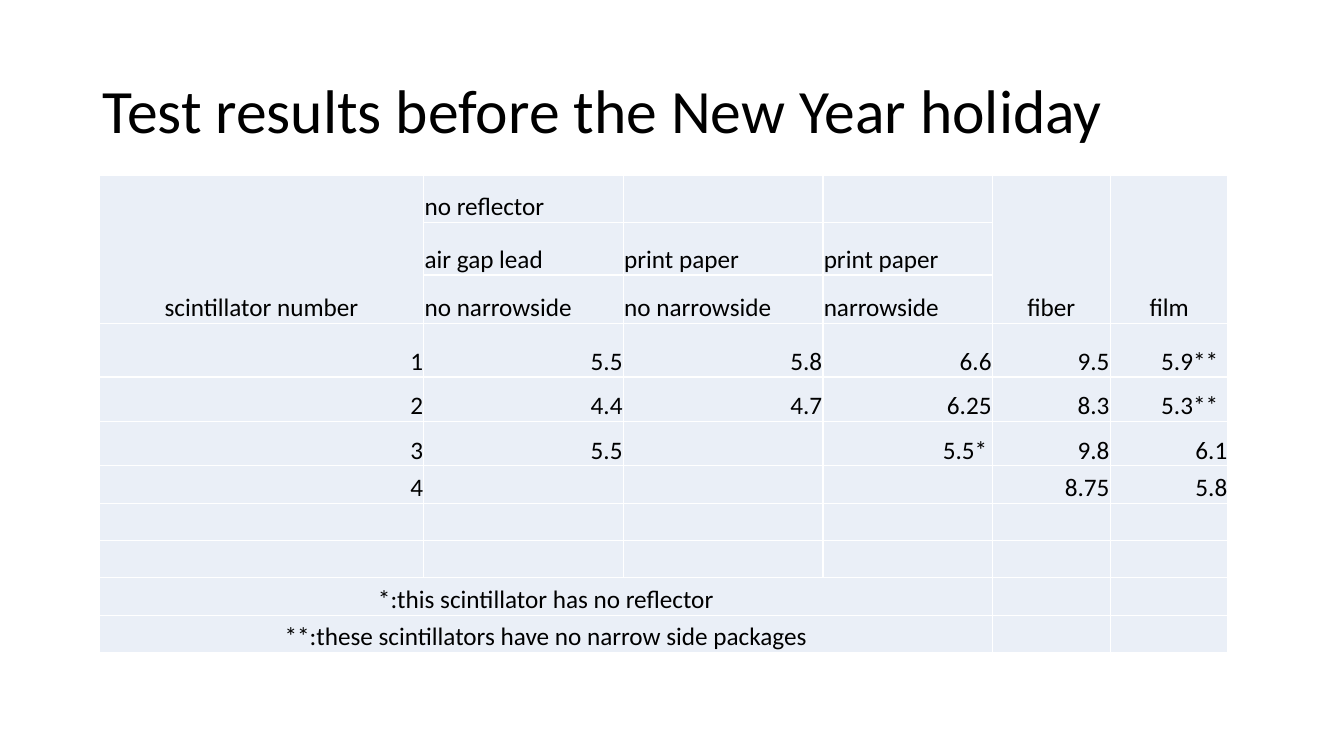
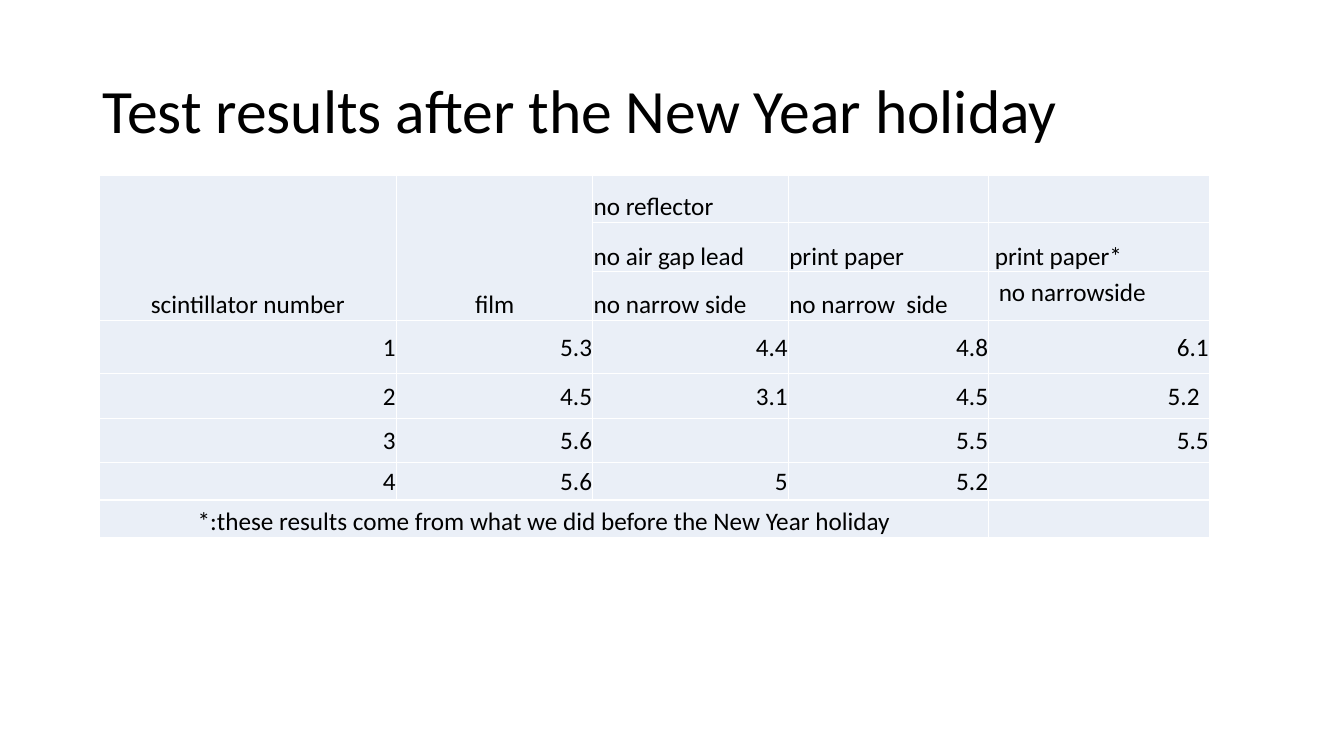
from dataclasses import dataclass, field

import pptx
import pptx.dml.color
import pptx.enum.text
import pptx.util

Cm = pptx.util.Cm
Pt = pptx.util.Pt
ALIGN = pptx.enum.text.PP_ALIGN
ANCHOR = pptx.enum.text.MSO_ANCHOR

COLORS = {"text": "000000", "cell": "EAEFF7"}
FONT = "Calibri"
TITLE_ONLY = 5
HEADER_ROWS = 3
NOTE_COLUMNS = 4
HEADER_HEIGHTS = [1.19, 1.32, 1.22]
VALUE_HEIGHTS = [1.35, 1.12, 1.12]
SHORT_ROW = 0.94
THIN = 0.02


@dataclass
class Results:
    title: str
    columns: list
    heights: list
    rows: list
    tall_headers: list
    note_count: int
    value_anchor: object
    side_insets: dict = field(default_factory=dict)
    top_cells: list = field(default_factory=list)


BEFORE = Results(
    title="Test results before the New Year holiday",
    columns=[8.18, 5.03, 5.03, 4.27, 2.97, 2.97],
    heights=HEADER_HEIGHTS + VALUE_HEIGHTS + [SHORT_ROW] * 5,
    rows=[
        ["scintillator number", "no reflector", "", "", "fiber", "film"],
        ["", "air gap lead", "print paper", "print paper", "", ""],
        ["", "no narrowside", "no narrowside", "narrowside", "", ""],
        ["1", "5.5", "5.8", "6.6", "9.5", "5.9**"],
        ["2", "4.4", "4.7", "6.25", "8.3", "5.3**"],
        ["3", "5.5", "", "5.5*", "9.8", "6.1"],
        ["4", "", "", "", "8.75", "5.8"],
        [""] * 6,
        [""] * 6,
        ["*:this scintillator has no reflector"] + [""] * 5,
        ["**:these scintillators have no narrow side packages"] + [""] * 5,
    ],
    tall_headers=[0, 4, 5],
    note_count=2,
    value_anchor=ANCHOR.BOTTOM,
    side_insets={(3, 5): 0.25, (4, 5): 0.25, (5, 3): 0.13},
)

AFTER = Results(
    title="Test results after the New Year holiday",
    columns=[7.49, 4.95, 4.93, 5.05, 5.56],
    heights=[1.19, 1.24, 1.22] + VALUE_HEIGHTS + [SHORT_ROW] * 2,
    rows=[
        ["scintillator number", "film", "no reflector", "", ""],
        ["", "", "no air gap lead", "print paper", "print paper*"],
        ["", "", "no narrow side", "no narrow  side", "no narrowside"],
        ["1", "5.3", "4.4", "4.8", "6.1"],
        ["2", "4.5", "3.1", "4.5", "5.2"],
        ["3", "5.6", "", "5.5", "5.5"],
        ["4", "5.6", "5", "5.2", ""],
        ["*:these results come from what we did before the New Year holiday"]
        + [""] * 4,
    ],
    tall_headers=[0, 1],
    note_count=1,
    value_anchor=ANCHOR.MIDDLE,
    side_insets={(1, 4): 0.15, (2, 4): 0.25, (4, 4): 0.25},
    top_cells=[(2, 4)],
)


def color(name):
    return pptx.dml.color.RGBColor.from_string(COLORS[name])


def style_paragraph(para, size, align):
    para.alignment = align
    para.font.name = FONT
    para.font.size = Pt(size)
    para.font.color.rgb = color("text")


def add_title(page, text):
    title = page.shapes.title
    title.left, title.top = Cm(2.33), Cm(1.01)
    title.width, title.height = Cm(29.21), Cm(3.68)
    title.text_frame.text = text
    title.text_frame.vertical_anchor = ANCHOR.MIDDLE
    para = title.text_frame.paragraphs[0]
    para.line_spacing = 0.9
    style_paragraph(para, 44, ALIGN.LEFT)


def fill_cell(cell, text, align, anchor, side_inset):
    cell.fill.solid()
    cell.fill.fore_color.rgb = color("cell")
    cell.margin_left = cell.margin_right = Cm(side_inset)
    cell.margin_top = Cm(0.13 if anchor == ANCHOR.TOP else THIN)
    cell.margin_bottom = 0
    cell.vertical_anchor = anchor
    cell.text = text
    style_paragraph(cell.text_frame.paragraphs[0], 18, align)


def cell_layout(results, row, column):
    first_note = len(results.rows) - results.note_count
    if row < HEADER_ROWS:
        align = ALIGN.CENTER if column in results.tall_headers else ALIGN.LEFT
        top = (row, column) in results.top_cells
        return align, ANCHOR.TOP if top else ANCHOR.BOTTOM
    if row >= first_note:
        return ALIGN.CENTER, ANCHOR.BOTTOM
    return ALIGN.RIGHT, results.value_anchor


def add_results_table(page, results):
    frame = page.shapes.add_table(
        len(results.rows), len(results.columns), Cm(2.5), Cm(4.42),
        Cm(sum(results.columns)), Cm(sum(results.heights)))
    table = frame.table
    table.first_row = False
    table.horz_banding = False
    for column, width in zip(table.columns, results.columns):
        column.width = Cm(width)
    for row, height in zip(table.rows, results.heights):
        row.height = Cm(height)
    for row, texts in enumerate(results.rows):
        for column, text in enumerate(texts):
            align, anchor = cell_layout(results, row, column)
            inset = results.side_insets.get((row, column), THIN)
            fill_cell(table.cell(row, column), text, align, anchor, inset)
    for column in results.tall_headers:
        table.cell(0, column).merge(table.cell(HEADER_ROWS - 1, column))
    row_count = len(results.rows)
    for row in range(row_count - results.note_count, row_count):
        table.cell(row, 0).merge(table.cell(row, NOTE_COLUMNS - 1))


def main():
    deck = pptx.Presentation()
    deck.slide_width, deck.slide_height = Cm(33.87), Cm(19.05)
    for results in (BEFORE, AFTER):
        page = deck.slides.add_slide(deck.slide_layouts[TITLE_ONLY])
        add_title(page, results.title)
        add_results_table(page, results)
    deck.save("out.pptx")


if __name__ == "__main__":
    main()
